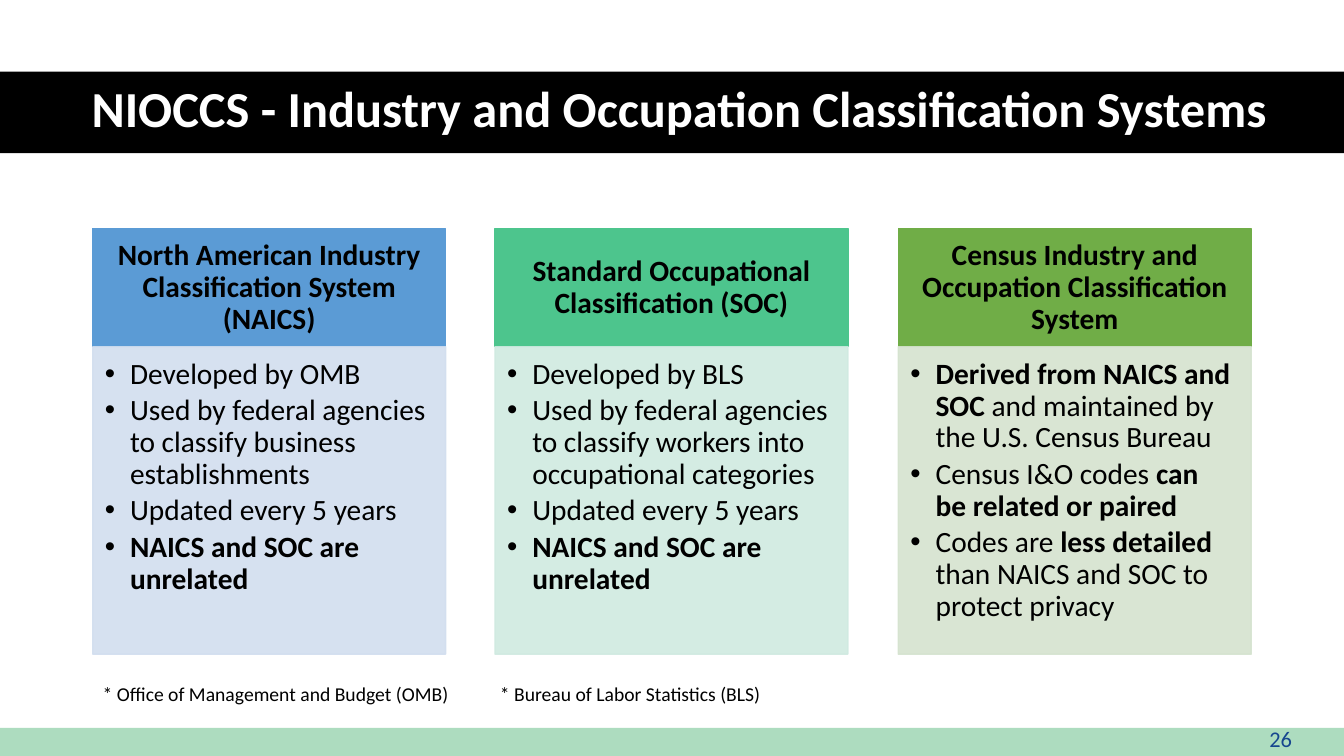
from lxml.etree import SubElement
from pptx import Presentation
from pptx.dml.color import RGBColor
from pptx.enum.shapes import MSO_SHAPE as Shape
from pptx.enum.text import MSO_ANCHOR as Anchor, MSO_AUTO_SIZE as AutoSize, PP_ALIGN as Align
from pptx.oxml.ns import qn
from pptx.util import Pt

PX = 9144
FONT = "Calibri"
BLACK = "000000"
UNRELATED = [("NAICS and SOC are unrelated", True)]
SYSTEMS = [
    ("North American Industry Classification System (NAICS)", "5B9BD5", "D2DEEF", [
        [("Developed by OMB", False)],
        [("Used by federal agencies to classify business establishments", False)],
        [("Updated every 5 years", False)],
        UNRELATED,
    ]),
    ("Standard Occupational Classification (SOC)", "4DC58D", "D0EAE1", [
        [("Developed by BLS", False)],
        [("Used by federal agencies to classify workers into occupational categories", False)],
        [("Updated every 5 years", False)],
        UNRELATED,
    ]),
    ("Census Industry and Occupation Classification System", "70AD47", "D5E3CF", [
        [("Derived from NAICS and SOC ", True), ("and maintained by the U.S. Census Bureau", False)],
        [("Census I&O codes ", False), ("can be related or paired", True)],
        [("Codes are ", False), ("less detailed ", True),
         ("than NAICS and SOC to protect privacy", False)],
    ]),
]


def emu(*lengths):
    """Turn px lengths into EMU."""
    return [length * PX for length in lengths]


def color(target, value):
    """Set a hex colour on a font or a fill."""
    if hasattr(target, "solid"):
        target.solid()
        target.fore_color.rgb = RGBColor.from_string(value)
    else:
        target.color.rgb = RGBColor.from_string(value)


def add_run(para, text, size, value=BLACK, bold=False):
    """Add one formatted run to a paragraph."""
    run = para.add_run()
    run.text = text
    run.font.name, run.font.size, run.font.bold = FONT, Pt(size), bold
    color(run.font, value)


def set_frame(frame, anchor, insets):
    """Set wrapping, anchor and insets of a text frame."""
    frame.word_wrap = True
    frame.auto_size = AutoSize.NONE
    frame.vertical_anchor = anchor
    (frame.margin_left, frame.margin_top,
     frame.margin_right, frame.margin_bottom) = emu(*insets)


def add_panel(page, box, value, outlined=False, alpha=None):
    """Add a filled rectangle, optionally outlined and translucent."""
    panel = page.shapes.add_shape(Shape.RECTANGLE, *emu(*box))
    panel.shadow.inherit = False
    color(panel.fill, value)
    if outlined:
        color(panel.line.fill, value)
        panel.line.width = Pt(1)
    else:
        panel.line.fill.background()
    if alpha:
        for tint in panel._element.spPr.iter(qn("a:srgbClr")):
            SubElement(tint, qn("a:alpha"), val=str(alpha * 1000))
    return panel


def add_bullet(para):
    """Give a paragraph a hanging bullet."""
    para.line_spacing = 0.9
    para.space_after = Pt(3.4)
    para.alignment = Align.LEFT
    props = para._p.get_or_add_pPr()
    props.set("marL", str(25 * PX))
    props.set("indent", str(-25 * PX))
    SubElement(props, qn("a:buFont"), typeface="Arial")
    SubElement(props, qn("a:buChar"), char="•")


def add_title(page, box, text):
    """Place the title over a full-width black band."""
    left, top, width, height = box
    add_panel(page, (left, top + 1, width, height), BLACK)
    title = page.shapes.title
    page.shapes._spTree.append(title._element)
    title.left, title.top, title.width, title.height = emu(left + 61, top, 1226, height)
    set_frame(title.text_frame, Anchor.MIDDLE, (10, 5, 10, 5))
    para = title.text_frame.paragraphs[0]
    para.alignment, para.line_spacing = Align.CENTER, 0.9
    add_run(para, text, 36, "FFFFFF", True)


def add_system(page, box, system):
    """Add one column: a heading over a bulleted panel."""
    left, top, width, height = box
    name, strong, pale, points = system
    head = 117
    heading = add_panel(page, (left, top, width, head), strong, True)
    set_frame(heading.text_frame, Anchor.MIDDLE, (16, 9, 16, 9))
    para = heading.text_frame.paragraphs[0]
    para.alignment, para.line_spacing = Align.CENTER, 0.9
    add_run(para, name, 21, bold=True)
    body = add_panel(page, (left, top + head, width, height - head), pale, True, 90)
    frame = body.text_frame
    set_frame(frame, Anchor.TOP, (12, 12, 16, 18))
    for index, point in enumerate(points):
        para = frame.add_paragraph() if index else frame.paragraphs[0]
        add_bullet(para)
        for text, bold in point:
            add_run(para, text, 21, bold=bold)


def add_systems(page, box):
    """Spread the system columns evenly over the box."""
    left, top, width, height = box
    column = 350
    for index, system in enumerate(SYSTEMS):
        start = left + index * (width - column) // (len(SYSTEMS) - 1)
        add_system(page, (start, top, column, height), system)


def add_label(page, box, text, size, value=BLACK):
    """Add a single-line text box."""
    label = page.shapes.add_textbox(*emu(*box))
    set_frame(label.text_frame, Anchor.TOP, (10, 5, 10, 5))
    add_run(label.text_frame.paragraphs[0], text, size, value)


def add_footer(page, box):
    """Add the green strip, the two footnotes and the page number."""
    left, top, width, height = box
    add_panel(page, box, "ADDCBF")
    add_label(page, (left + 92, top - 50, 375, 34), "* Office of Management and Budget (OMB)", 14)
    add_label(page, (left + 486, top - 50, 362, 34), "* Bureau of Labor Statistics (BLS)", 14)
    add_label(page, (left + 1249, top - 8, 55, 37), "26", 16, "17468F")


def main():
    """Build and save the deck."""
    deck = Presentation()
    deck.slide_width, deck.slide_height = emu(1333, 750)
    page = deck.slides.add_slide(deck.slide_layouts[5])
    add_title(page, (0, 70, 1333, 81), "NIOCCS - Industry and Occupation Classification Systems")
    add_systems(page, (92, 227, 1149, 422))
    add_footer(page, (0, 722, 1333, 28))
    deck.save("out.pptx")


if __name__ == "__main__":
    main()
